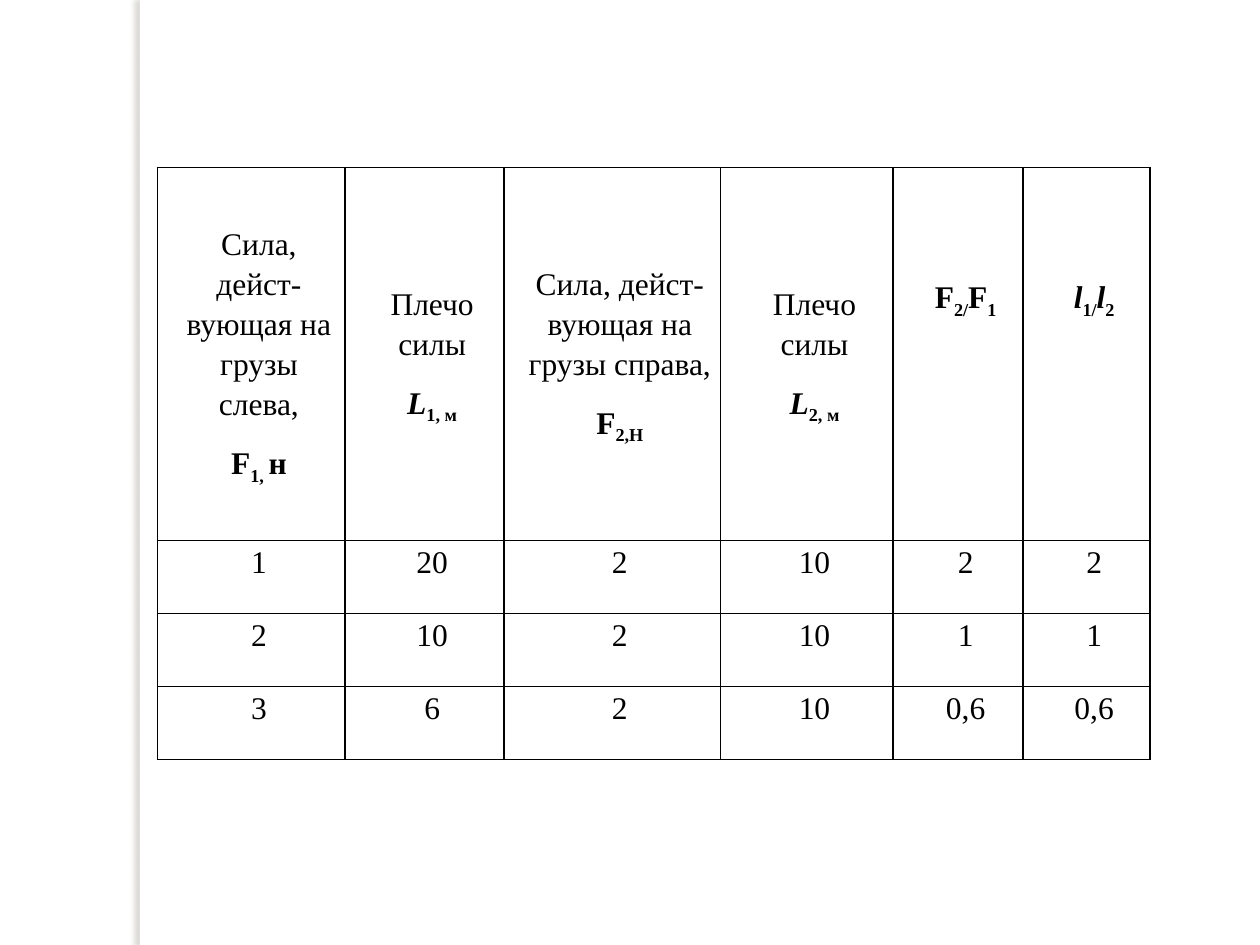
"""Build a slide with a table of lever forces and arms."""
import pptx
import pptx.util
import pptx.dml.color
import pptx.enum.shapes
import pptx.enum.text
import pptx.oxml
import pptx.oxml.ns
from dataclasses import dataclass

Inches = pptx.util.Inches
Pt = pptx.util.Pt
NS = pptx.oxml.ns.nsdecls("a")


@dataclass
class Theme:
    font: str = "Times New Roman"
    size: float = 18
    ink: str = "000000"
    paper: str = "FFFFFF"
    shade: str = "736F63"
    rule: float = 1
    lead: float = 1.15
    after: float = 10


def color(code):
    return pptx.dml.color.RGBColor.from_string(code)


def write(para, text, theme, bold=False, slant=False, sub=False):
    run = para.add_run()
    run.text = text
    font = run.font
    font.name, font.size = theme.font, Pt(theme.size)
    font.bold, font.italic = bold, slant
    font.color.rgb = color(theme.ink)
    if sub:
        run._r.get_or_add_rPr().set("baseline", "-25000")


class Page:
    def __init__(self, deck, theme):
        self.theme = theme
        self.slide = deck.slides.add_slide(deck.slide_layouts[6])
        fill = self.slide.background.fill
        fill.solid()
        fill.fore_color.rgb = color(theme.paper)

    def strip(self, left, top, width, height):
        kind = pptx.enum.shapes.MSO_SHAPE.RECTANGLE
        box = self.slide.shapes.add_shape(
            kind, Inches(left), Inches(top), Inches(width), Inches(height))
        box.fill.solid()
        box.fill.fore_color.rgb = color(self.theme.paper)
        box.line.fill.background()
        box.shadow.inherit = False
        glow = pptx.oxml.parse_xml(
            f'<a:outerShdw {NS} blurRad="{Pt(3)}" dist="{Pt(3)}" dir="10800000" rotWithShape="0">'
            f'<a:srgbClr val="{self.theme.shade}"><a:alpha val="25000"/></a:srgbClr></a:outerShdw>')
        box._element.spPr.find(pptx.oxml.ns.qn("a:effectLst")).append(glow)

    def table(self, left, top, cols, rows, cells):
        frame = self.slide.shapes.add_table(
            len(rows), len(cols), Inches(left), Inches(top),
            Inches(sum(cols)), Inches(sum(rows)))
        grid = frame.table
        grid.first_row = grid.horz_banding = False
        for col, width in zip(grid.columns, cols):
            col.width = Inches(width)
        for row, height in zip(grid.rows, rows):
            row.height = Inches(height)
        for r, line in enumerate(cells):
            for c, paras in enumerate(line):
                self.cell(grid.cell(r, c), paras, head=r == 0)

    def cell(self, cell, paras, head):
        anchor = pptx.enum.text.MSO_ANCHOR
        cell.vertical_anchor = anchor.MIDDLE if head else anchor.TOP
        cell.margin_left = cell.margin_right = Inches(0.07)
        cell.margin_top = 0
        cell.margin_bottom = Inches(0.9 if head and len(paras) == 1 else 0)
        self.edge(cell)
        cell.fill.background()
        frame = cell.text_frame
        for i, runs in enumerate(paras):
            para = frame.add_paragraph() if i else frame.paragraphs[0]
            para.alignment = pptx.enum.text.PP_ALIGN.CENTER
            para.line_spacing = self.theme.lead
            para.space_after = Pt(self.theme.after)
            props = para._p.get_or_add_pPr()
            props.set("marL", str(Inches(0.12)))
            props.set("indent", "0")
            for text, form in runs:
                write(para, text, self.theme, **form)

    def edge(self, cell):
        props = cell._tc.get_or_add_tcPr()
        for side in ("lnL", "lnR", "lnT", "lnB"):
            props.append(pptx.oxml.parse_xml(
                f'<a:{side} {NS} w="{Pt(self.theme.rule)}"><a:solidFill>'
                f'<a:srgbClr val="{self.theme.ink}"/></a:solidFill></a:{side}>'))


def main():
    deck = pptx.Presentation()
    deck.slide_width, deck.slide_height = Inches(10), Inches(7.5)
    page = Page(deck, Theme())
    page.strip(1.11, 0, 0.08, 7.5)

    plain, bold = {}, {"bold": True}
    slant = {"bold": True, "slant": True}
    sub = {"bold": True, "sub": True}
    arm = [("Плечо силы", plain)]
    heads = [
        [[("Сила, дейст-вующая на грузы слева,", plain)],
         [("F", bold), ("1, ", sub), ("н", bold)]],
        [arm, [("L", slant), ("1, м", sub)]],
        [[("Сила, дейст-вующая на грузы справа,", plain)],
         [("F", bold), ("2,Н", sub)]],
        [arm, [("L", slant), ("2, м", sub)]],
        [[("F", bold), ("2/", sub), ("F", bold), ("1", sub)]],
        [[("l", slant), ("1/", sub), ("l", slant), ("2", sub)]],
    ]
    data = [
        ["1", "20", "2", "10", "2", "2"],
        ["2", "10", "2", "10", "1", "1"],
        ["3", "6", "2", "10", "0,6", "0,6"],
    ]
    body = [[[[(text, plain)]] for text in line] for line in data]
    page.table(1.25, 1.33, [1.49, 1.26, 1.72, 1.37, 1.03, 1.01],
               [2.96] + [0.58] * len(data), [heads] + body)
    deck.save("out.pptx")


if __name__ == "__main__":
    main()
